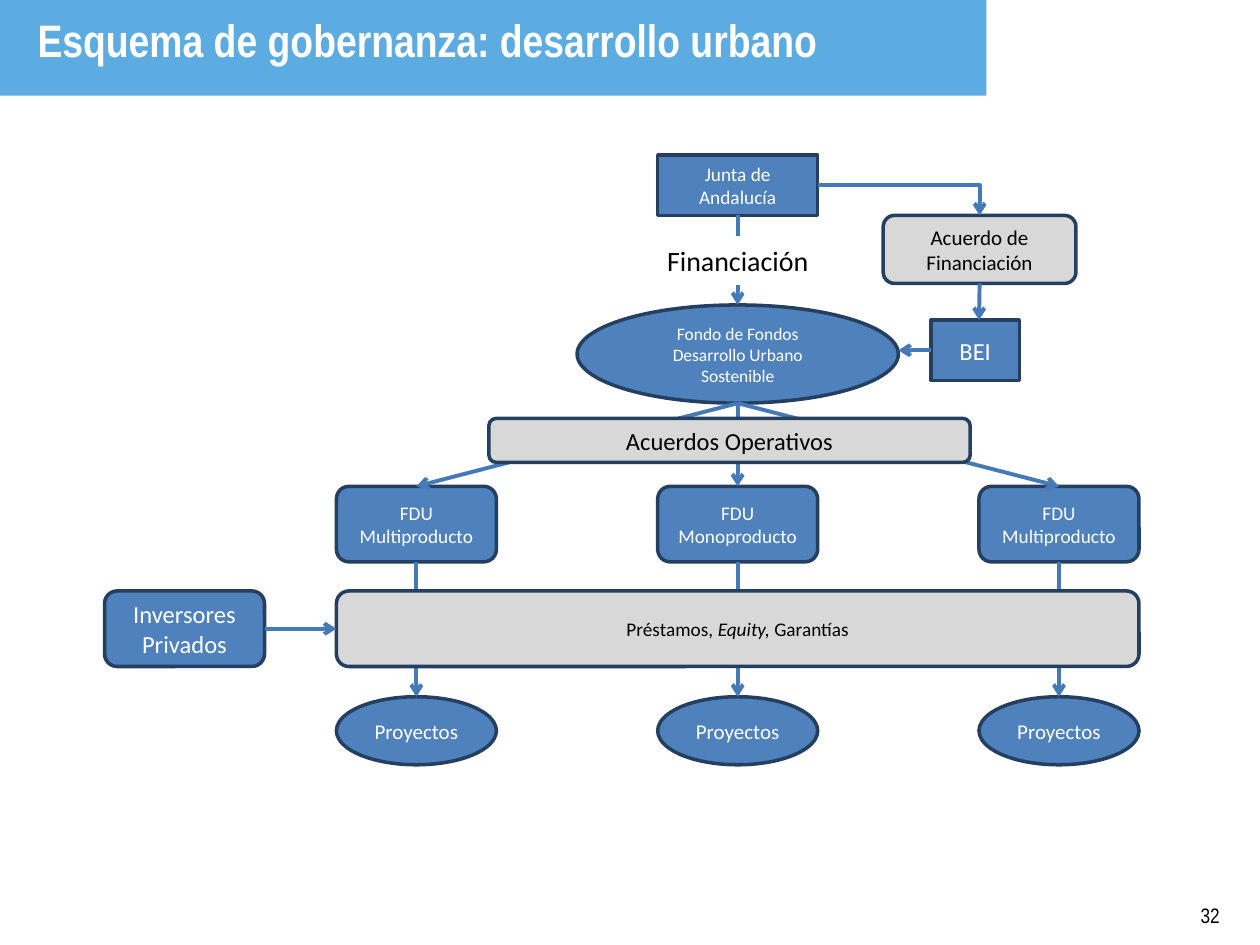
from lxml import etree
from pptx import Presentation
from pptx.dml.color import RGBColor
from pptx.enum import shapes, text
from pptx.oxml import ns
from pptx.util import Inches, Pt

WHITE = RGBColor(0xFF, 0xFF, 0xFF)
BLACK = RGBColor(0, 0, 0)
SKY = RGBColor(0x5C, 0xAC, 0xE2)
BLUE = RGBColor(0x4F, 0x81, 0xBD)
NAVY = RGBColor(0x24, 0x3F, 0x60)
ARROW_BLUE = RGBColor(0x45, 0x79, 0xB8)
GRAY = RGBColor(0xD8, 0xD8, 0xD8)

RECTANGLE = shapes.MSO_SHAPE.RECTANGLE
ROUNDED = shapes.MSO_SHAPE.ROUNDED_RECTANGLE
OVAL = shapes.MSO_SHAPE.OVAL
TOP, LEFT, BOTTOM, RIGHT = range(4)

COLUMN_PITCH = 2.55
NODE_WIDTH = 1.27


def write_text(shape, content, size, color=WHITE, font="Calibri", bold=False,
               align=text.PP_ALIGN.CENTER, anchor=text.MSO_ANCHOR.MIDDLE, inset=0.1):
    frame = shape.text_frame
    frame.word_wrap = True
    frame.vertical_anchor = anchor
    frame.margin_left = frame.margin_right = Inches(inset)
    for number, line in enumerate(content.split("\n")):
        paragraph = frame.add_paragraph() if number else frame.paragraphs[0]
        paragraph.alignment = align
        for position, part in enumerate(line.split("*")):
            run = paragraph.add_run()
            run.text = part
            run.font.name = font
            run.font.size = Pt(size)
            run.font.bold = bold
            run.font.italic = position % 2 == 1
            run.font.color.rgb = color


def add_node(slide, kind, left, top, width, height, content, size,
             fill=BLUE, line=NAVY, **text_format):
    shape = slide.shapes.add_shape(kind, Inches(left), Inches(top),
                                   Inches(width), Inches(height))
    shape.shadow.inherit = False
    shape.fill.solid()
    shape.fill.fore_color.rgb = fill
    shape.line.color.rgb = line
    shape.line.width = Pt(2)
    write_text(shape, content, size, **text_format)
    return shape


def add_arrow(slide, start=(0, 0), end=(0, 0), begin_joint=None, end_joint=None, bent=False):
    kind = shapes.MSO_CONNECTOR.ELBOW if bent else shapes.MSO_CONNECTOR.STRAIGHT
    connector = slide.shapes.add_connector(kind, *(Inches(value) for value in (*start, *end)))
    if begin_joint:
        connector.begin_connect(*begin_joint)
    if end_joint:
        connector.end_connect(*end_joint)
    connector.line.color.rgb = ARROW_BLUE
    connector.line.width = Pt(2.25)
    properties = connector._element.spPr
    if bent:
        properties.find(ns.qn("a:prstGeom")).set("prst", "bentConnector2")
    etree.SubElement(properties.find(ns.qn("a:ln")), ns.qn("a:tailEnd"), type="arrow")
    etree.SubElement(properties, ns.qn("a:effectLst"))
    return connector


def add_header(slide, left, top, width, height):
    band = slide.shapes.add_shape(RECTANGLE, Inches(left), Inches(top),
                                  Inches(width), Inches(height))
    band.shadow.inherit = False
    band.fill.solid()
    band.fill.fore_color.rgb = SKY
    band.line.fill.background()
    title = slide.shapes.add_textbox(Inches(left + 0.2), Inches(top + 0.05),
                                     Inches(7), Inches(0.63))
    write_text(title, "Esquema de gobernanza: desarrollo urbano", 26, font="Arial Narrow",
               bold=True, align=text.PP_ALIGN.JUSTIFY, anchor=text.MSO_ANCHOR.TOP)


def add_page_number(slide, left, top, width, height):
    box = slide.shapes.add_textbox(Inches(left), Inches(top), Inches(width), Inches(height))
    write_text(box, "32", 12, color=BLACK, font="Arial Narrow")


def add_funding(slide, left, top):
    government = add_node(slide, RECTANGLE, left + 0.64, top, NODE_WIDTH, 0.48,
                          "Junta de Andalucía", 11)
    fund = add_node(slide, OVAL, left, top + 1.19, 2.55, 0.78,
                    "Fondo de Fondos Desarrollo Urbano Sostenible", 10, inset=0.2)
    bank = add_node(slide, RECTANGLE, left + 2.81, top + 1.31, 0.7, 0.48, "BEI", 14)
    agreement = add_node(slide, ROUNDED, left + 2.43, top + 0.48, 1.53, 0.54,
                         "Acuerdo de Financiación", 12, fill=GRAY, color=BLACK)
    add_arrow(slide, begin_joint=(government, RIGHT), end_joint=(agreement, TOP), bent=True)
    add_arrow(slide, end=(left + 3.19, top + 1.31), begin_joint=(agreement, BOTTOM))
    add_arrow(slide, end=(left + 2.55, top + 1.55), begin_joint=(bank, LEFT))
    add_arrow(slide, begin_joint=(government, BOTTOM), end_joint=(fund, TOP))
    add_node(slide, RECTANGLE, left + 0.51, top + 0.66, 1.53, 0.36, "Financiación", 16,
             fill=WHITE, line=WHITE, color=BLACK)


def add_operations(slide, left, top):
    columns = [left + COLUMN_PITCH * number for number in range(3)]
    fund_bottom = (columns[1] + NODE_WIDTH / 2, top)
    labels = ("FDU\nMultiproducto", "FDU\nMonoproducto", "FDU\nMultiproducto")
    for column, label in zip(columns, labels):
        manager = add_node(slide, ROUNDED, column, top + 0.66, NODE_WIDTH, 0.6, label, 11)
        project = add_node(slide, OVAL, column, top + 2.33, NODE_WIDTH, 0.54,
                           "Proyectos", 12, inset=0.05)
        add_arrow(slide, start=fund_bottom, end_joint=(manager, TOP))
        add_arrow(slide, begin_joint=(manager, BOTTOM), end_joint=(project, TOP))
    add_node(slide, ROUNDED, left + 1.21, top + 0.12, 3.82, 0.35, "Acuerdos Operativos", 14,
             fill=GRAY, color=BLACK)
    products = add_node(slide, ROUNDED, left, top + 1.49, 2 * COLUMN_PITCH + NODE_WIDTH, 0.6,
                        "Préstamos, *Equity, *Garantías", 11, fill=GRAY, color=BLACK)
    investors = add_node(slide, ROUNDED, left - 1.84, top + 1.49, NODE_WIDTH, 0.6,
                         "Inversores Privados", 14)
    add_arrow(slide, begin_joint=(investors, RIGHT), end_joint=(products, LEFT))


def main():
    presentation = Presentation()
    presentation.slide_width = Inches(10)
    presentation.slide_height = Inches(7.5)
    slide = presentation.slides.add_slide(presentation.slide_layouts[6])
    add_header(slide, 0, 0, 7.83, 0.76)
    add_page_number(slide, 9.33, 7.14, 0.55, 0.24)
    add_funding(slide, 4.58, 1.23)
    add_operations(slide, 2.67, 3.2)
    presentation.save("out.pptx")


if __name__ == "__main__":
    main()
